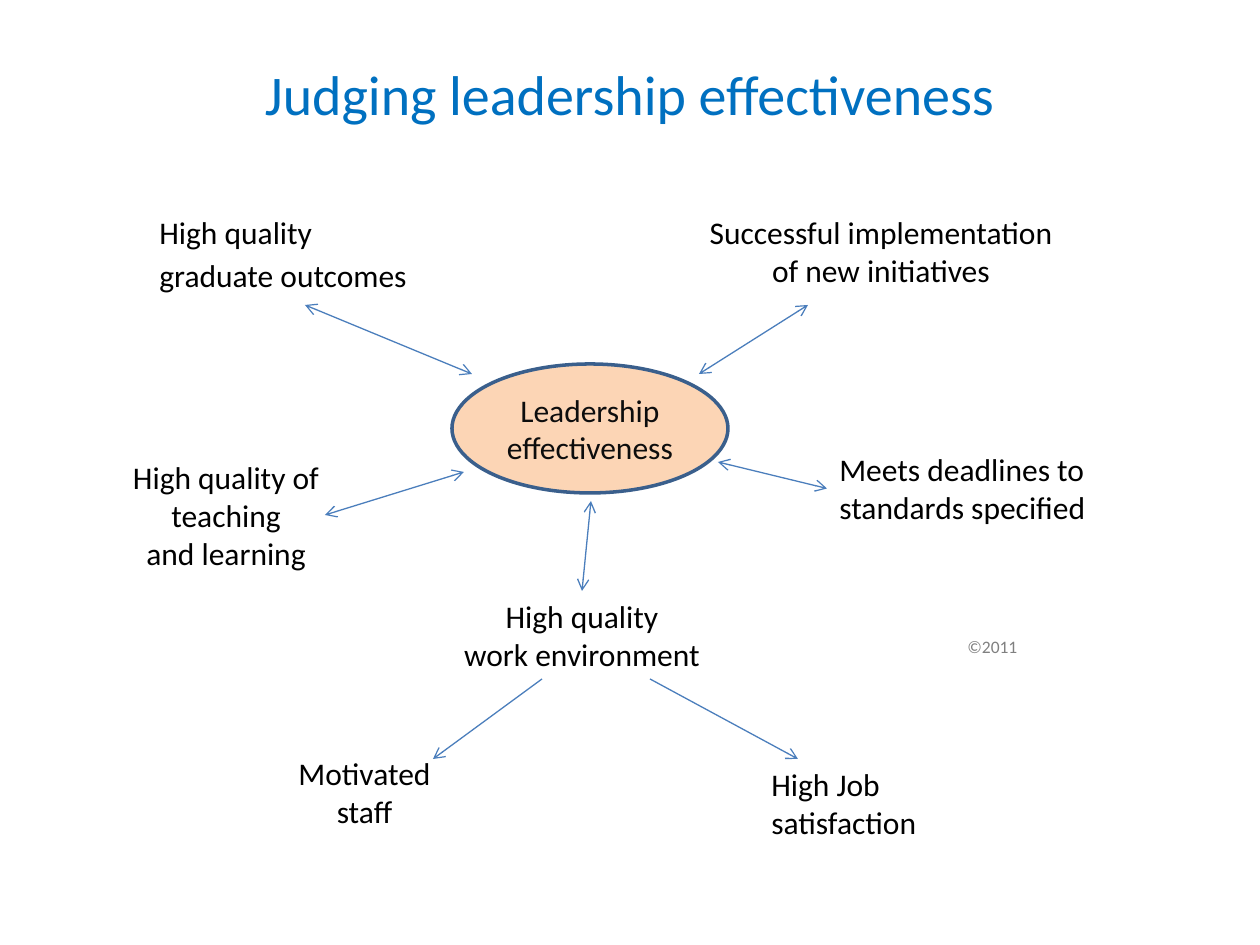
"""Build a slide that maps the signs of effective leadership around a hub."""
from dataclasses import dataclass

from lxml.etree import SubElement
from pptx import Presentation
from pptx.dml.color import RGBColor as RGB
from pptx.enum.shapes import MSO_CONNECTOR as LINE, MSO_SHAPE as SHAPE
from pptx.enum.text import MSO_ANCHOR as ANCHOR, MSO_AUTO_SIZE as FIT, PP_ALIGN as ALIGN
from pptx.oxml.ns import qn
from pptx.util import Emu, Pt


@dataclass(frozen=True)
class Theme:
    """Colours, font and sizes of the slide."""
    font: str = "Calibri"
    title: RGB = RGB(0x00, 0x70, 0xC0)
    text: RGB = RGB(0x00, 0x00, 0x00)
    hub_text: RGB = RGB(0x0D, 0x0D, 0x0D)
    hub_fill: RGB = RGB(0xFC, 0xD5, 0xB5)
    hub_line: RGB = RGB(0x3A, 0x5F, 0x8C)
    arrow: RGB = RGB(0x4B, 0x7E, 0xBC)
    muted: RGB = RGB(0x80, 0x80, 0x80)
    title_size: int = 32
    body_size: int = 18
    small_size: int = 10


def px(value):
    """Turn pixels at 126 to the inch into EMU."""
    return Emu(round(value * 914400 / 126))


class Builder:
    """Draw styled elements on one slide."""

    def __init__(self, s, theme):
        """Keep the slide and its theme."""
        self.s, self.theme = s, theme

    def set_text(self, sp, lines, size, color, align, anchor=ANCHOR.TOP, gap=0):
        """Fill a shape with one paragraph per line."""
        tf = sp.text_frame
        tf.word_wrap = True
        tf.vertical_anchor = anchor
        tf.text = "\n".join(lines)
        for i, p in enumerate(tf.paragraphs):
            p.alignment = align
            p.space_before = Pt(gap if i else 0)
            p.font.name = self.theme.font
            p.font.size = Pt(size)
            p.font.color.rgb = color

    def title(self, text, box):
        """Place and format the title placeholder."""
        sp = self.s.shapes.title
        sp.left, sp.top, sp.width, sp.height = map(px, box)
        self.set_text(sp, [text], self.theme.title_size, self.theme.title, ALIGN.CENTER, ANCHOR.MIDDLE)

    def label(self, lines, box, align=ALIGN.CENTER, size=None, color=None, gap=0):
        """Add a text box that grows with its text."""
        sp = self.s.shapes.add_textbox(*map(px, box))
        self.set_text(sp, lines, size or self.theme.body_size, color or self.theme.text, align, gap=gap)
        sp.text_frame.auto_size = FIT.SHAPE_TO_FIT_TEXT
        return sp

    def hub(self, text, box):
        """Add the central ellipse."""
        sp = self.s.shapes.add_shape(SHAPE.OVAL, *map(px, box))
        sp.shadow.inherit = False
        sp.fill.solid()
        sp.fill.fore_color.rgb = self.theme.hub_fill
        sp.line.color.rgb = self.theme.hub_line
        sp.line.width = Pt(2)
        self.set_text(sp, [text], self.theme.body_size, self.theme.hub_text, ALIGN.CENTER, ANCHOR.MIDDLE)

    def arrow(self, start, end, both=True, target=None):
        """Add an arrow, joined to a (shape, side) target if one is given."""
        cx = self.s.shapes.add_connector(LINE.STRAIGHT, *map(px, start + end))
        if target:
            cx.end_connect(*target)
        cx.line.color.rgb = self.theme.arrow
        cx.line.width = Pt(0.75)
        sp_pr = cx._element.spPr
        ln = sp_pr.find(qn("a:ln"))
        for tag in ("a:headEnd", "a:tailEnd") if both else ("a:tailEnd",):
            SubElement(ln, qn(tag), type="arrow")
        SubElement(sp_pr, qn("a:effectLst"))


def main():
    """Build and save the presentation."""
    prs = Presentation()
    prs.slide_width, prs.slide_height = px(1260), px(945)
    theme = Theme()
    b = Builder(prs.slides.add_slide(prs.slide_layouts[5]), theme)

    b.title("Judging leadership effectiveness", (63, 38, 1134, 110))
    b.label(["High quality", "graduate outcomes"], (147, 207, 281, 94), ALIGN.LEFT, gap=3)
    b.label(["Successful implementation of new initiatives"], (689, 207, 384, 89))
    b.label(["High quality of", "teaching", "and learning"], (98, 452, 256, 127))
    environment = b.label(["High quality", "work environment"], (444, 591, 276, 89))
    deadlines = b.label(["Meets deadlines to standards specified"], (827, 444, 276, 89), ALIGN.LEFT)
    b.label(["Motivated staff"], (256, 748, 217, 89))
    b.label(["High Job satisfaction"], (759, 759, 186, 89), ALIGN.LEFT)
    b.hub("Leadership effectiveness", (452, 364, 276, 129))

    b.arrow((305, 305), (472, 374))
    b.arrow((325, 515), (464, 472))
    b.arrow((808, 305), (699, 374))
    b.arrow((718, 462), (827, 488), target=(deadlines, 1))
    b.arrow((591, 501), (582, 591), target=(environment, 0))
    b.arrow((542, 679), (433, 759), both=False)
    b.arrow((650, 679), (798, 759), both=False)
    b.label(["©2011"], (955, 630, 178, 34), ALIGN.LEFT, theme.small_size, theme.muted)

    prs.save("out.pptx")


if __name__ == "__main__":
    main()
